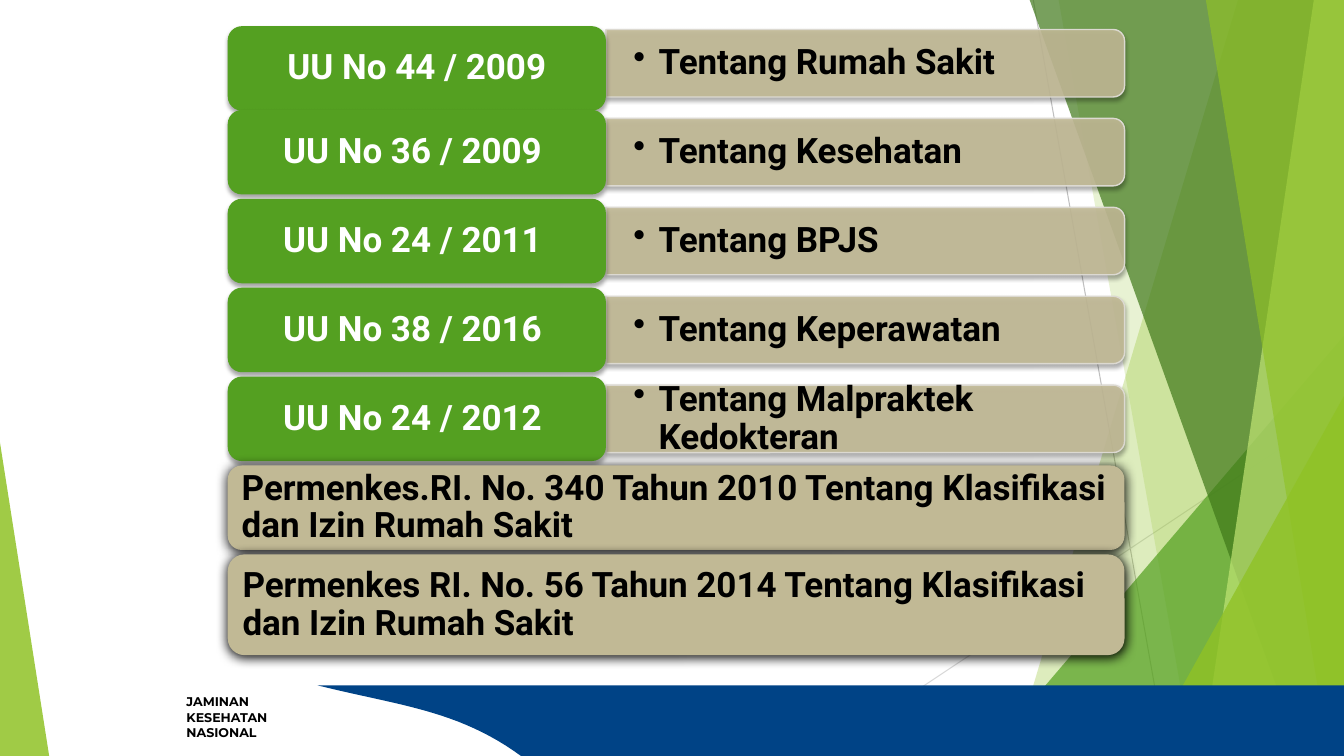
from lxml.etree import SubElement
from pptx import Presentation
from pptx.dml.color import RGBColor
from pptx.enum.shapes import MSO_CONNECTOR, MSO_SHAPE
from pptx.enum.text import MSO_ANCHOR, PP_ALIGN
from pptx.oxml.ns import qn
from pptx.util import Cm, Pt

WHITE = RGBColor(0xFF, 0xFF, 0xFF)
BLACK = RGBColor(0x00, 0x00, 0x00)
LIME = RGBColor(0x90, 0xC2, 0x26)
PALE = RGBColor(0xC0, 0xE4, 0x74)
GREEN = RGBColor(0x54, 0xA0, 0x21)
FOREST = RGBColor(0x3F, 0x78, 0x19)
NAVY = RGBColor(0x00, 0x43, 0x86)
SAND = RGBColor(0xC1, 0xB9, 0x95)
EDGE = RGBColor(0xDC, 0xD9, 0xD1)
GREY = RGBColor(0xBF, 0xBF, 0xBF)
SILVER = RGBColor(0xD9, 0xD9, 0xD9)

WIDE, HIGH = 33.87, 19.05
SOFT = (35, 3, 2)  # shadow opacity %, blur pt, distance pt
HARD = (100, 8.5, 1)

LAWS = [
    ("UU No 44 / 2009", "Tentang Rumah Sakit"),
    ("UU No 36 / 2009 ", "Tentang Kesehatan"),
    ("UU No 24 / 2011 ", "Tentang BPJS"),
    ("UU No 38 / 2016 ", "Tentang Keperawatan"),
    ("UU No 24 / 2012 ", "Tentang Malpraktek Kedokteran"),
]
RULES = [
    ("Permenkes.RI. No. 340 Tahun 2010 Tentang Klasifikasi dan Izin Rumah Sakit", 2.13),
    ("Permenkes RI. No. 56 Tahun 2014 Tentang Klasifikasi dan Izin Rumah Sakit", 2.54),
]


def fade(color, share):
    SubElement(color, qn("a:alpha"), val=str(share * 1000))


def paint(shape, color, share=100):
    shape.fill.solid()
    shape.fill.fore_color.rgb = color
    shape.line.fill.background()
    shape.shadow.inherit = False
    if share < 100:
        fade(shape.fill._xPr.find(".//" + qn("a:srgbClr")), share)


def shade(shape, look):
    share, blur, dist = look
    effects = shape._element.spPr.find(qn("a:effectLst"))
    outer = SubElement(effects, qn("a:outerShdw"), blurRad=str(Pt(blur)),
                       dist=str(Pt(dist)), dir="5400000", rotWithShape="0")
    fade(SubElement(outer, qn("a:srgbClr"), val="000000"), share)


def block(slide, kind, box, color, share=100):
    shape = slide.shapes.add_shape(kind, *map(Cm, box))
    paint(shape, color, share)
    return shape


def poly(slide, points, color, share=100):
    points = [(Cm(x), Cm(y)) for x, y in points]
    builder = slide.shapes.build_freeform(*points[0])
    builder.add_line_segments(points[1:], close=True)
    paint(builder.convert_to_shape(), color, share)


def write(shape, text, color, align=PP_ALIGN.LEFT, pad=(0.25, 0.13)):
    frame = shape.text_frame
    frame.word_wrap = True
    frame.vertical_anchor = MSO_ANCHOR.MIDDLE
    frame.margin_left = frame.margin_right = Cm(pad[0])
    frame.margin_top = frame.margin_bottom = Cm(pad[1])
    frame.text = text
    para = frame.paragraphs[0]
    para.alignment = align
    para.line_spacing = 0.9
    style(para, "Roboto", 25, color)
    return para


def style(para, face, size, color):
    for run in para.runs:
        run.font.name = face
        run.font.size = Pt(size)
        run.font.bold = True
        run.font.color.rgb = color


def thread(slide, start, end, color):
    line = slide.shapes.add_connector(MSO_CONNECTOR.STRAIGHT, *map(Cm, start + end))
    line.line.color.rgb = color
    line.line.width = Pt(0.75)
    SubElement(line._element.spPr, qn("a:effectLst"))


def facets(slide, box):
    """Translucent panes and wedges that lean on the right edge of the box."""
    left, top, wide, high = box
    right, base = left + wide, top + high

    def pane(upper, lower, color, share):
        poly(slide, [(right - upper, top), (right, top), (right, base),
                     (right - lower, base)], color, share)

    def wedge(width, height, color, share):
        shape = block(slide, MSO_SHAPE.ISOSCELES_TRIANGLE,
                      (right - width, base - height, width, height), color, share)
        shape.adjustments[0] = 1

    thread(slide, (right - 7.83, top), (right - 4.46, base), GREY)
    thread(slide, (right, top + 10.24), (right - 13.25, base), SILVER)
    pane(2.67, 8.36, LIME, 30)
    pane(7.19, 3.81, LIME, 20)
    wedge(9.04, 10.59, GREEN, 72)
    pane(7.92, 1.07, FOREST, 70)
    pane(0.76, 3.58, PALE, 70)
    pane(3.48, 0.38, LIME, 65)
    wedge(5.05, 9.07, LIME, 80)

    # Small wedge on the left edge
    shape = block(slide, MSO_SHAPE.ISOSCELES_TRIANGLE,
                  (left, base - 7.9, 1.24, 7.9), LIME, 85)
    shape.adjustments[0] = 0


def footer(slide, box):
    """Programme name beside a blue band with a curved left end."""
    left, top, wide, high = box
    right, base = left + wide, top + high

    name = slide.shapes.add_textbox(Cm(left + 4.45), Cm(top + 0.1), Cm(3.94), Cm(1.4))
    name.text_frame.word_wrap = True
    name.text_frame.text = "JAMINAN\nKESEHATAN\nNASIONAL"
    for para in name.text_frame.paragraphs:
        style(para, "Montserrat", 9, BLACK)

    knots = [(left + 13.13, base), (left + 11.53, top + 0.61),
             (left + 10.03, top + 0.51), (left + 8, top)]
    curve = []
    for step in range(25):
        t = step / 24
        parts = ((1 - t) ** 3, 3 * t * (1 - t) ** 2, 3 * t * t * (1 - t), t ** 3)
        curve.append(tuple(sum(p * k[axis] for p, k in zip(parts, knots))
                           for axis in (0, 1)))
    poly(slide, [(right, top), (right, base)] + curve, NAVY)


def law(slide, box, label, topic, drop=0):
    """Green law number with its subject in a sand bar to the right."""
    left, top, wide, high = box
    tag, bar = 9.53, 1.7
    x, mid, span = left + tag, top + high / 2, wide - tag

    # Subject bar, turned so that its round corners face right
    strip = block(slide, MSO_SHAPE.ROUND_2_SAME_RECTANGLE,
                  (x + (span - bar) / 2, mid - span / 2, bar, span), SAND, 90)
    strip.rotation = 90
    strip.line.color.rgb = EDGE
    strip.line.width = Pt(1)
    shade(strip, SOFT)

    # Bulleted subject
    note = slide.shapes.add_textbox(Cm(x), Cm(mid - 0.77), Cm(span - 0.08), Cm(1.54))
    para = write(note, topic, BLACK, pad=(0.69, 0.36))
    props = para._p.get_or_add_pPr()
    props.set("marL", str(Cm(0.64)))
    props.set("indent", str(-Cm(0.64)))
    SubElement(props, qn("a:buChar"), char="•")

    # Law number
    plate = block(slide, MSO_SHAPE.ROUNDED_RECTANGLE,
                  (left, top + drop, tag, high), GREEN)
    shade(plate, SOFT)
    write(plate, label, WHITE, PP_ALIGN.CENTER)


def rule(slide, box, text):
    """Full-width ministerial regulation."""
    plate = block(slide, MSO_SHAPE.ROUNDED_RECTANGLE, box, SAND)
    shade(plate, HARD)
    write(plate, text, BLACK)


def listing(slide, box):
    """Laws and regulations stacked at an equal pitch."""
    left, top, wide, _ = box
    pitch = 2.24
    for row, (label, topic) in enumerate(LAWS):
        law(slide, (left, top + row * pitch, wide, 2.13), label, topic,
            drop=0 if row else 0.13)
    for row, (text, high) in enumerate(RULES, len(LAWS)):
        rule(slide, (left, top + row * pitch, wide, high), text)


def main():
    deck = Presentation()
    deck.slide_width, deck.slide_height = Cm(WIDE), Cm(HIGH)
    slide = deck.slides.add_slide(deck.slide_layouts[6])
    facets(slide, (0, 0, WIDE, HIGH))
    footer(slide, (0, 17.27, WIDE, HIGH - 17.27))
    listing(slide, (5.74, 0.53, 22.6, 15.98))
    deck.save("out.pptx")


if __name__ == "__main__":
    main()
